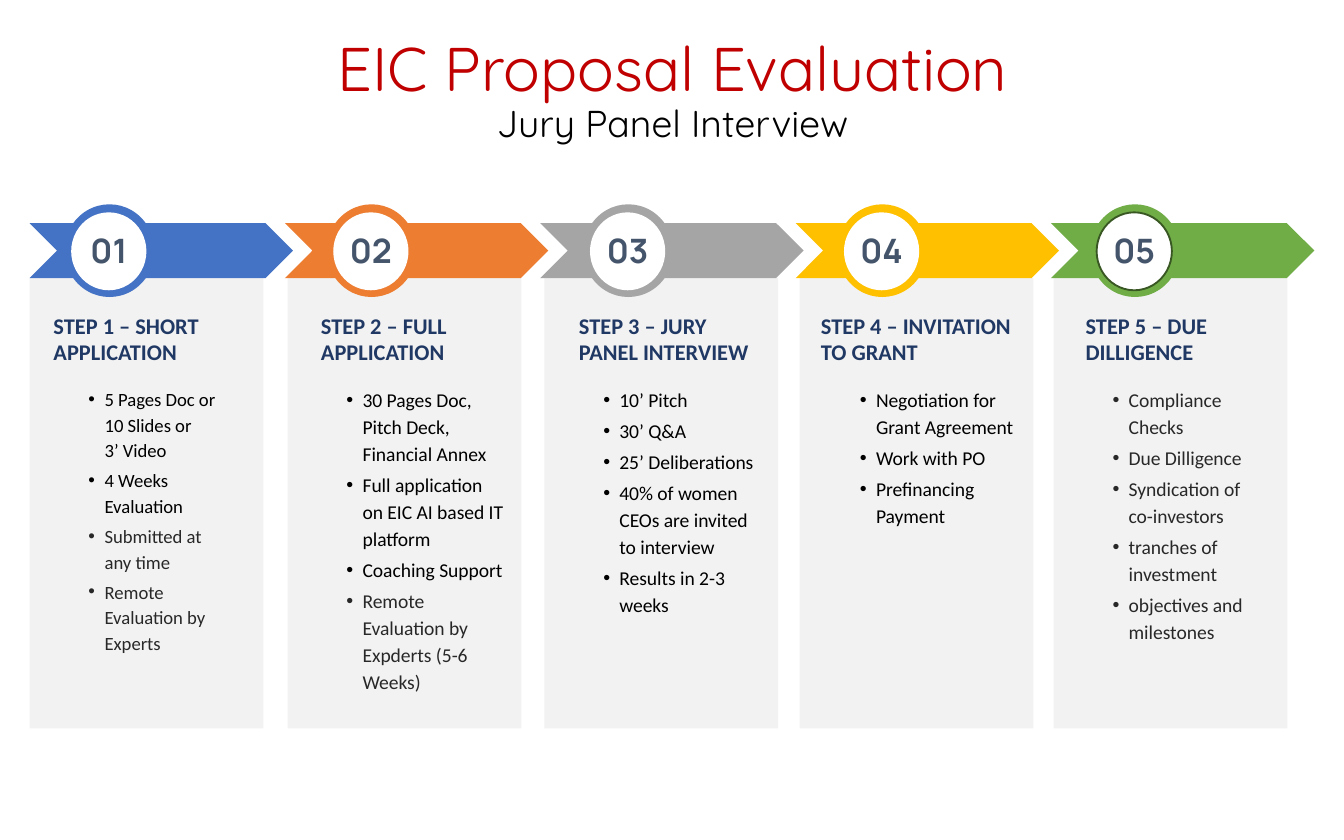
from dataclasses import dataclass

from lxml import etree
from pptx import Presentation
from pptx.dml.color import RGBColor
from pptx.enum.shapes import MSO_SHAPE
from pptx.enum.text import MSO_ANCHOR, MSO_AUTO_SIZE, PP_ALIGN
from pptx.oxml.ns import qn
from pptx.util import Pt

PX = 9144  # 100 px to the inch
TITLE_ONLY = 5
RECT, CHEVRON, OVAL = MSO_SHAPE.RECTANGLE, MSO_SHAPE.CHEVRON, MSO_SHAPE.OVAL
CENTER, LEFT = PP_ALIGN.CENTER, PP_ALIGN.LEFT
MIDDLE, NO_FIT = MSO_ANCHOR.MIDDLE, MSO_AUTO_SIZE.NONE

BLACK, GRAY, RED, WHITE = "000000", "282828", "C00000", "FFFFFF"
CARD, NAVY, SLATE, DARK_GREEN = "F2F2F2", "203864", "44546A", "385723"


@dataclass
class Step:
    color: str
    card_left: int
    ring_left: int
    heading: str
    heading_box: tuple
    items_box: tuple
    items: list
    gray_from: int  # index of the first item set in gray
    size: float = 10.5
    outline: str = None


STEPS = [
    Step("4472C4", 22, 48, "STEP 1 – SHORT APPLICATION",
         (30, 227, 163, 50), (49, 281, 133, 211),
         ["5 Pages Doc or\n10 Slides or\n3’ Video", "4 Weeks Evaluation",
          "Submitted at any time", "Remote Evaluation by Experts"], 2, size=10),
    Step("ED7D31", 214, 243, "STEP 2 – FULL APPLICATION",
         (229, 227, 147, 50), (241, 281, 144, 241),
         ["30 Pages Doc, Pitch Deck, Financial Annex",
          "Full application on EIC AI based IT platform", "Coaching Support",
          "Remote Evaluation by Expderts (5-6 Weeks)"], 3),
    Step("A5A5A5", 405, 434, "STEP 3 – JURY PANEL INTERVIEW",
         (421, 227, 147, 50), (432, 281, 142, 183),
         ["10’ Pitch", "30’ Q&A", "25’ Deliberations",
          "40% of women CEOs are invited to interview", "Results in 2-3 weeks"], 5),
    Step("FFC000", 595, 623, "STEP 4 – INVITATION TO GRANT",
         (601, 227, 169, 50), (623, 281, 147, 116),
         ["Negotiation for Grant Agreement", "Work with PO",
          "Prefinancing Payment"], 3),
    Step("70AD47", 784, 811, "STEP 5 – DUE DILLIGENCE",
         (798, 227, 136, 50), (811, 281, 133, 203),
         ["Compliance Checks", "Due Dilligence", "Syndication of co-investors",
          "tranches of investment", "objectives and milestones"], 0,
         outline=DARK_GREEN),
]


def rgb(value):
    return RGBColor.from_string(value)


def apply(target, **values):
    for name, value in values.items():
        setattr(target, name, value)


def emu(box):
    return [length * PX for length in box]


class Deck:
    """Holds the text styles and the slide being filled."""

    heading = dict(name="Calibri", size=12, bold=True, color=NAVY)
    number = dict(name="Manrope", size=18, bold=True, color=SLATE)

    def __init__(self, slide):
        self.slide = slide

    def add_text(self, paragraph, text, name, size, color, bold=False):
        """Add runs; line breaks take the size of the text before them."""
        for index, line in enumerate(text.split("\n")):
            if index:
                paragraph.add_line_break()
                line_break = paragraph._p.findall(qn("a:br"))[-1]
                etree.SubElement(line_break, qn("a:rPr"), sz=str(int(size * 100)))
            if line:
                run = paragraph.add_run()
                run.text = line
                apply(run.font, name=name, size=Pt(size), bold=bold)
                run.font.color.rgb = rgb(color)

    def title(self, box, main, subtitle):
        holder = self.slide.shapes.title
        apply(holder, **dict(zip(("left", "top", "width", "height"), emu(box))))
        apply(holder.text_frame, word_wrap=True, auto_size=NO_FIT,
              vertical_anchor=MIDDLE)
        paragraph = holder.text_frame.paragraphs[0]
        apply(paragraph, alignment=CENTER, line_spacing=0.9)
        self.add_text(paragraph, main + "\n", "Quicksand", 33, RED)
        self.add_text(paragraph, subtitle, "Quicksand", 20, BLACK)

    def shape(self, kind, box, fill, outline=None):
        shape = self.slide.shapes.add_shape(kind, *emu(box))
        shape.shadow.inherit = False
        shape.fill.solid()
        shape.fill.fore_color.rgb = rgb(fill)
        if outline:
            shape.line.color.rgb = rgb(outline)
            shape.line.width = Pt(1)
        else:
            shape.line.fill.background()

    def frame(self, box):
        frame = self.slide.shapes.add_textbox(*emu(box)).text_frame
        frame.word_wrap = True
        return frame

    def label(self, box, text, style, alignment=LEFT):
        paragraph = self.frame(box).paragraphs[0]
        paragraph.alignment = alignment
        self.add_text(paragraph, text, **style)

    def bullets(self, box, items, size, gray_from):
        frame = self.frame(box)
        for index, item in enumerate(items):
            paragraph = frame.add_paragraph() if index else frame.paragraphs[0]
            apply(paragraph, line_spacing=1.15, space_after=Pt(2.2))
            properties = paragraph._p.get_or_add_pPr()
            properties.set("marL", str(19 * PX))
            properties.set("indent", str(-12 * PX))
            etree.SubElement(properties, qn("a:buFont"), typeface="Arial")
            etree.SubElement(properties, qn("a:buChar"), char="•")
            color = GRAY if index >= gray_from else BLACK
            self.add_text(paragraph, item, "Calibri", size, color)


def main():
    presentation = Presentation()
    apply(presentation, slide_width=1000 * PX, slide_height=625 * PX)
    layout = presentation.slide_layouts[TITLE_ONLY]
    deck = Deck(presentation.slides.add_slide(layout))

    deck.title((49, 11, 903, 115), "EIC Proposal Evaluation", "Jury Panel Interview")
    for step in STEPS:
        deck.shape(RECT, (step.card_left, 207, 174, 335), CARD)
    for index, step in enumerate(STEPS):
        ring = step.ring_left
        deck.shape(CHEVRON, (22 + 190 * index, 166, 196, 41), step.color)
        deck.shape(OVAL, (ring, 152, 67, 69), step.color)
        deck.shape(OVAL, (ring + 5, 158, 56, 58), WHITE, step.outline)
        deck.label((ring + 1, 166, 64, 40), f"{index + 1:02}", deck.number, CENTER)
        deck.label(step.heading_box, step.heading, deck.heading)
        deck.bullets(step.items_box, step.items, step.size, step.gray_from)
    presentation.save("out.pptx")


if __name__ == "__main__":
    main()
